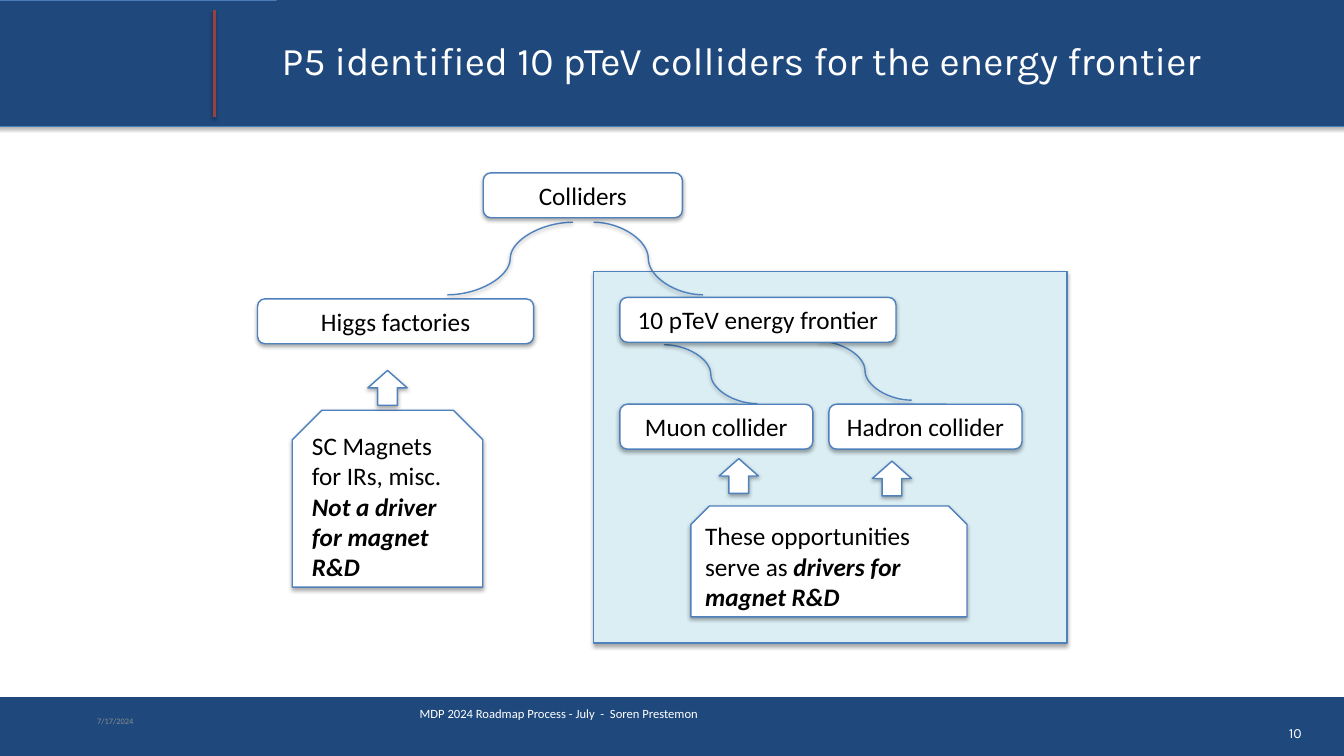
from lxml import etree
from pptx import Presentation
from pptx.dml.color import RGBColor
from pptx.enum.shapes import MSO_CONNECTOR, MSO_SHAPE
from pptx.enum.text import MSO_ANCHOR, MSO_AUTO_SIZE, PP_ALIGN
from pptx.oxml.ns import qn
from pptx.util import Inches, Pt

RECT, ROUND = MSO_SHAPE.RECTANGLE, MSO_SHAPE.ROUNDED_RECTANGLE
SNIP, ARROW = MSO_SHAPE.SNIP_2_SAME_RECTANGLE, MSO_SHAPE.UP_ARROW
STRAIGHT, CURVE = MSO_CONNECTOR.STRAIGHT, MSO_CONNECTOR.CURVE
LEFT, CENTER, RIGHT = PP_ALIGN.LEFT, PP_ALIGN.CENTER, PP_ALIGN.RIGHT
MIDDLE, GROW = MSO_ANCHOR.MIDDLE, MSO_AUTO_SIZE.SHAPE_TO_FIT_TEXT

COLORS = {"navy": "1F497D", "edge": "4A7EBB", "red": "9A403E", "blue": "4F81BD",
          "pale": "DBEEF4", "white": "FFFFFF", "black": "000000", "grey": "8C8C8C"}
RGB = {name: RGBColor.from_string(value) for name, value in COLORS.items()}

prs = Presentation()
prs.slide_width, prs.slide_height = Inches(26.67), Inches(15)
s = prs.slides.add_slide(prs.slide_layouts[6])


def outline(sp, color, width, alpha=35):
    """Give a shape or connector its line and a soft shadow below."""
    sp.line.color.rgb, sp.line.width = RGB[color], Pt(width)
    sp_pr = sp._element.spPr
    for old in sp_pr.findall(qn("a:effectLst")):
        sp_pr.remove(old)
    effects = etree.SubElement(sp_pr, qn("a:effectLst"))
    shadow = etree.SubElement(effects, qn("a:outerShdw"), blurRad=str(Pt(6)),
                              dist=str(Pt(3)), dir="5400000", rotWithShape="0")
    clr = etree.SubElement(shadow, qn("a:srgbClr"), val=COLORS["black"])
    etree.SubElement(clr, qn("a:alpha"), val=str(alpha * 1000))


def write(sp, paragraphs, size, font="Calibri", color="black", align=LEFT, **frame):
    """Fill a text frame; each paragraph is a list of (text, emphasis) runs."""
    tf = sp.text_frame
    settings = {"word_wrap": True, "vertical_anchor": MIDDLE,
                "margin_left": Inches(0.1), "margin_right": Inches(0.1),
                "margin_top": Inches(0.1), "margin_bottom": Inches(0.1), **frame}
    for name, value in settings.items():
        setattr(tf, name, value)
    for i, runs in enumerate(paragraphs):
        p = tf.paragraphs[0] if i == 0 else tf.add_paragraph()
        p.alignment = align
        for text, strong in runs:
            r = p.add_run()
            r.text = text
            for name, value in {"size": Pt(size), "name": font,
                                "bold": strong, "italic": strong}.items():
                setattr(r.font, name, value)
            r.font.color.rgb = RGB[color]


# Header and footer bands, header rule, highlighted panel, title area
bands = [
    ((-0.04, 13.83, 26.74, 1.19), "navy", None),
    ((-0.07, 0, 26.79, 2.5), "navy", ("edge", 1)),
    ((11.78, 5.39, 9.39, 7.37), "pale", ("blue", 2)),
    ((5.49, -0.03, 21.21, 2.42), "navy", None),
]
for at, fill, line in bands:
    sp = s.shapes.add_shape(RECT, *map(Inches, at))
    sp.shadow.inherit = False
    sp.fill.solid()
    sp.fill.fore_color.rgb = RGB[fill]
    if line:
        outline(sp, *line)
    else:
        sp.line.fill.background()
write(sp, [[("P5 identified 10 pTeV colliders for the energy frontier", False)]],
      56, "Karla", "white")

rule = s.shapes.add_connector(STRAIGHT, *map(Inches, (4.25, 2.33, 4.25, 0.2)))
outline(rule, "red", 4, alpha=38)

# Footer texts
tight = {"margin_top": Inches(0.05), "margin_bottom": Inches(0.05)}
raised = {"margin_top": Inches(0.05), "margin_bottom": Inches(0.35)}
footers = [
    ((1.83, 13.9, 6, 0.8), "7/17/2024", 12, "Calibri", "grey", LEFT, tight),
    ((8.23, 13.9, 15.36, 0.8), "MDP 2024 Roadmap Process - July  -  Soren Prestemon",
     18, "Calibri", "white", LEFT, raised),
    ((25.4, 14.28, 0.53, 0.51), "10", 20, "Karla", "white", RIGHT, {"word_wrap": False}),
]
for at, text, size, font, color, align, frame in footers:
    sp = s.shapes.add_textbox(*map(Inches, at))
    write(sp, [[(text, False)]], size, font, color, align, **frame)

# Branches of the collider tree
branches = [
    (11.78, 4.41, 13.95, 5.85),
    (11.37, 4.41, 8.88, 5.85),
    (16.24, 6.77, 18.09, 7.94),
    (13.18, 6.84, 15.03, 8.01),
]
for ends in branches:
    outline(s.shapes.add_connector(CURVE, *map(Inches, ends)), "blue", 2)

# Tree nodes, notes and the arrows that lead up from the notes
nodes = [
    (9.59, 3.43, 3.95, "Colliders"),
    (5.11, 5.93, 5.48, "Higgs factories"),
    (12.3, 5.9, 5.48, "10 pTeV energy frontier"),
    (12.3, 8.02, 3.83, "Muon collider"),
    (16.45, 8.02, 3.83, "Hadron collider"),
]
notes = [
    ((5.8, 8.14, 3.78, 3.51), [[("SC Magnets for IRs, misc.", False)],
                               [("Not a driver for magnet R&D", True)]]),
    ((13.71, 10.04, 5.48, 2.2), [[("These opportunities serve as ", False),
                                  ("drivers for magnet R&D", True)]]),
]
arrows = [(7.3, 7.35), (14.27, 9.1), (17.31, 9.15)]

items = [(ROUND, (x, y, w, 0.89), [[(text, False)]], CENTER) for x, y, w, text in nodes]
items += [(SNIP, at, paragraphs, LEFT) for at, paragraphs in notes]
items += [(ARROW, (x, y, 0.78, 0.69), None, LEFT) for x, y in arrows]
for kind, at, paragraphs, align in items:
    sp = s.shapes.add_shape(kind, *map(Inches, at))
    sp.fill.solid()
    sp.fill.fore_color.rgb = RGB["white"]
    outline(sp, "blue", 2)
    if paragraphs:
        write(sp, paragraphs, 36, align=align, auto_size=GROW)

prs.save("out.pptx")
